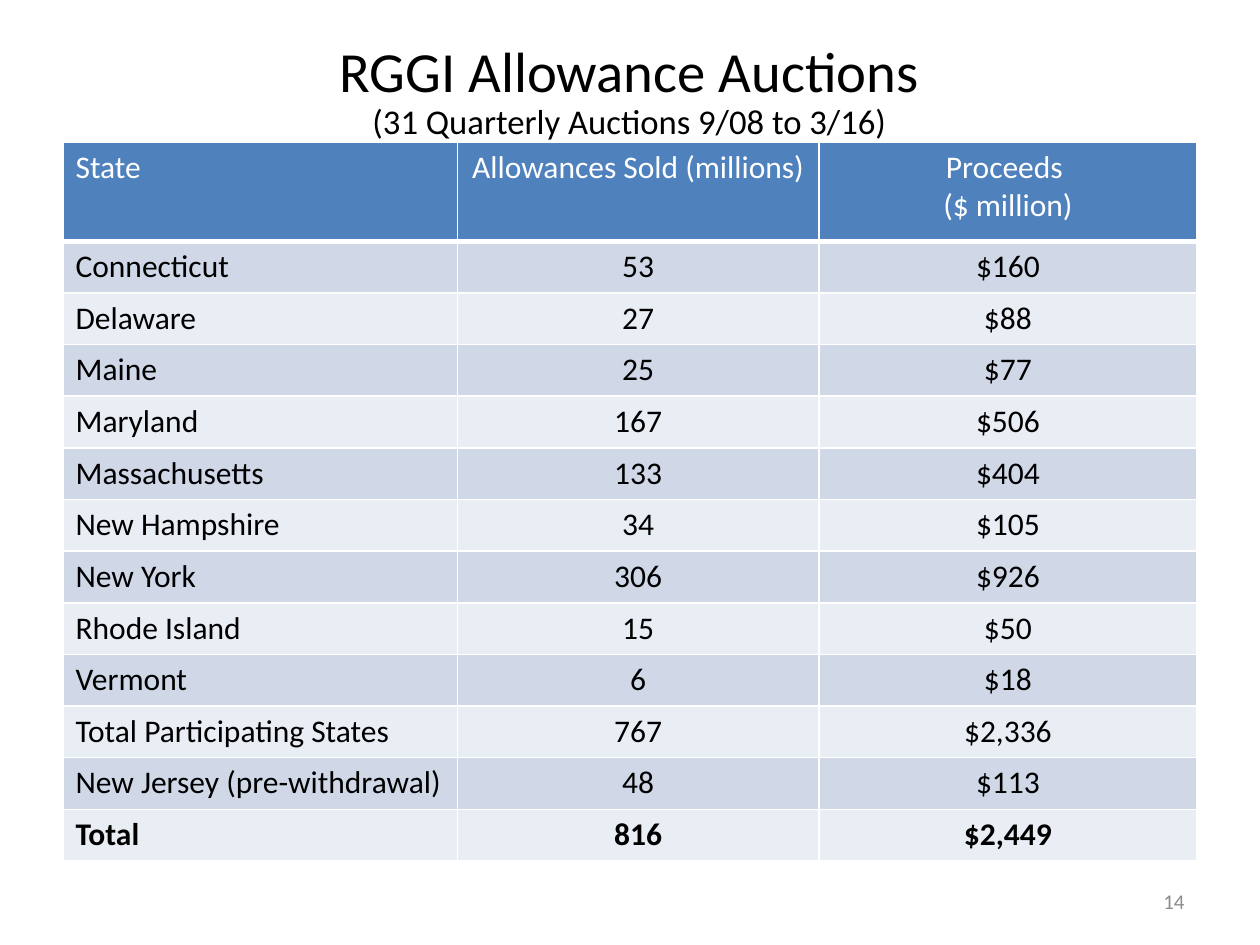
from dataclasses import dataclass

from lxml import etree
from pptx import Presentation
from pptx.dml.color import RGBColor
from pptx.enum.text import MSO_ANCHOR, PP_ALIGN
from pptx.oxml.ns import qn
from pptx.util import Inches, Pt

LEFT, CENTER, RIGHT = PP_ALIGN.LEFT, PP_ALIGN.CENTER, PP_ALIGN.RIGHT
MIDDLE = MSO_ANCHOR.MIDDLE

SLIDE_WIDTH, SLIDE_HEIGHT = Inches(10), Inches(7.5)
COLUMN_SHARES = (0.313, 0.287, 0.3)
HEADER_HEIGHT, ROW_HEIGHT = Inches(0.79), Inches(0.41)

HEADER = ("State", "Allowances Sold (millions)", "Proceeds \n($ million)")
AUCTION_RESULTS = (
    ("Connecticut", "53", "$160"),
    ("Delaware", "27", "$88"),
    ("Maine", "25", "$77"),
    ("Maryland", "167", "$506"),
    ("Massachusetts", "133", "$404"),
    ("New Hampshire", "34", "$105"),
    ("New York", "306", "$926"),
    ("Rhode Island", "15", "$50"),
    ("Vermont", "6", "$18"),
    ("Total Participating States", "767", "$2,336"),
    ("New Jersey (pre-withdrawal)", "48", "$113"),
    ("Total", "816", "$2,449"),
)


@dataclass(frozen=True)
class Theme:
    """Colours, font and type sizes of the slide."""

    font: str = "Calibri"
    text: str = "000000"
    light: str = "FFFFFF"
    muted: str = "8C8C8C"
    header: str = "4F81BD"
    bands: tuple = ("D0D8E8", "E9EDF4")
    title_size: float = 32.4
    subtitle_size: float = 19.8
    table_size: float = 18
    number_size: float = 12
    rule: float = 1
    header_rule: float = 3


THEME = Theme()


def style_run(run, size, color, bold=False):
    """Apply the theme font with a size, colour and weight."""
    run.font.name = THEME.font
    run.font.size = Pt(size)
    run.font.bold = bold
    run.font.color.rgb = RGBColor.from_string(color)


def add_label(slide, shares, text, sizes, color, align):
    """Add a one-paragraph text box placed by shares of the slide."""
    left, top, width, height = shares
    label = slide.shapes.add_textbox(
        int(left * SLIDE_WIDTH), int(top * SLIDE_HEIGHT),
        int(width * SLIDE_WIDTH), int(height * SLIDE_HEIGHT))
    frame = label.text_frame
    frame.word_wrap = True
    frame.vertical_anchor = MIDDLE
    frame.text = text
    paragraph = frame.paragraphs[0]
    paragraph.alignment = align
    for run, size in zip(paragraph.runs, sizes):
        style_run(run, size, color)
    return frame


def add_title(slide):
    """Add the heading with its smaller second line."""
    frame = add_label(slide, (0.098, 0.036, 0.803, 0.157),
                      "RGGI Allowance Auctions\v(31 Quarterly Auctions 9/08 to 3/16)",
                      (THEME.title_size, THEME.subtitle_size), THEME.text, CENTER)
    frame.margin_bottom = Inches(0.3)
    frame.paragraphs[0].line_spacing = 0.9


def rule_cell(cell, bottom_width):
    """Draw light rules on the four sides of a cell."""
    properties = cell._tc.get_or_add_tcPr()
    widths = {"a:lnL": THEME.rule, "a:lnR": THEME.rule,
              "a:lnT": THEME.rule, "a:lnB": bottom_width}
    for side, width in widths.items():
        line = etree.SubElement(properties, qn(side), w=str(Pt(width)))
        fill = etree.SubElement(line, qn("a:solidFill"))
        etree.SubElement(fill, qn("a:srgbClr"), val=THEME.light)


def fill_row(cells, values, fill, color, bold=False, bottom_width=THEME.rule):
    """Write and format one table row."""
    for column, (cell, value) in enumerate(zip(cells, values)):
        rule_cell(cell, bottom_width)
        cell.fill.solid()
        cell.fill.fore_color.rgb = RGBColor.from_string(fill)
        cell.text_frame.text = value
        for paragraph in cell.text_frame.paragraphs:
            paragraph.alignment = CENTER if column else LEFT
            for run in paragraph.runs:
                style_run(run, THEME.table_size, color, bold)


def add_auction_table(slide):
    """Add the table of allowances and proceeds by state."""
    row_count = len(AUCTION_RESULTS)
    table = slide.shapes.add_table(
        row_count + 1, len(HEADER), int(0.05 * SLIDE_WIDTH), int(0.15 * SLIDE_HEIGHT),
        int(sum(COLUMN_SHARES) * SLIDE_WIDTH),
        HEADER_HEIGHT + row_count * ROW_HEIGHT).table
    for column, share in zip(table.columns, COLUMN_SHARES):
        column.width = int(share * SLIDE_WIDTH)
    header_row, *state_rows = table.rows
    header_row.height = HEADER_HEIGHT
    fill_row(header_row.cells, HEADER, THEME.header, THEME.light,
             bottom_width=THEME.header_rule)
    for index, (row, values) in enumerate(zip(state_rows, AUCTION_RESULTS)):
        row.height = ROW_HEIGHT
        fill_row(row.cells, values, THEME.bands[index % 2], THEME.text,
                 bold=values[0] == "Total")


def main():
    """Build and save the slide."""
    deck = Presentation()
    deck.slide_width, deck.slide_height = SLIDE_WIDTH, SLIDE_HEIGHT
    slide = deck.slides.add_slide(deck.slide_layouts[6])
    add_title(slide)
    add_auction_table(slide)
    add_label(slide, (0.717, 0.927, 0.233, 0.053), "14",
              (THEME.number_size,), THEME.muted, RIGHT)
    deck.save("out.pptx")


if __name__ == "__main__":
    main()
